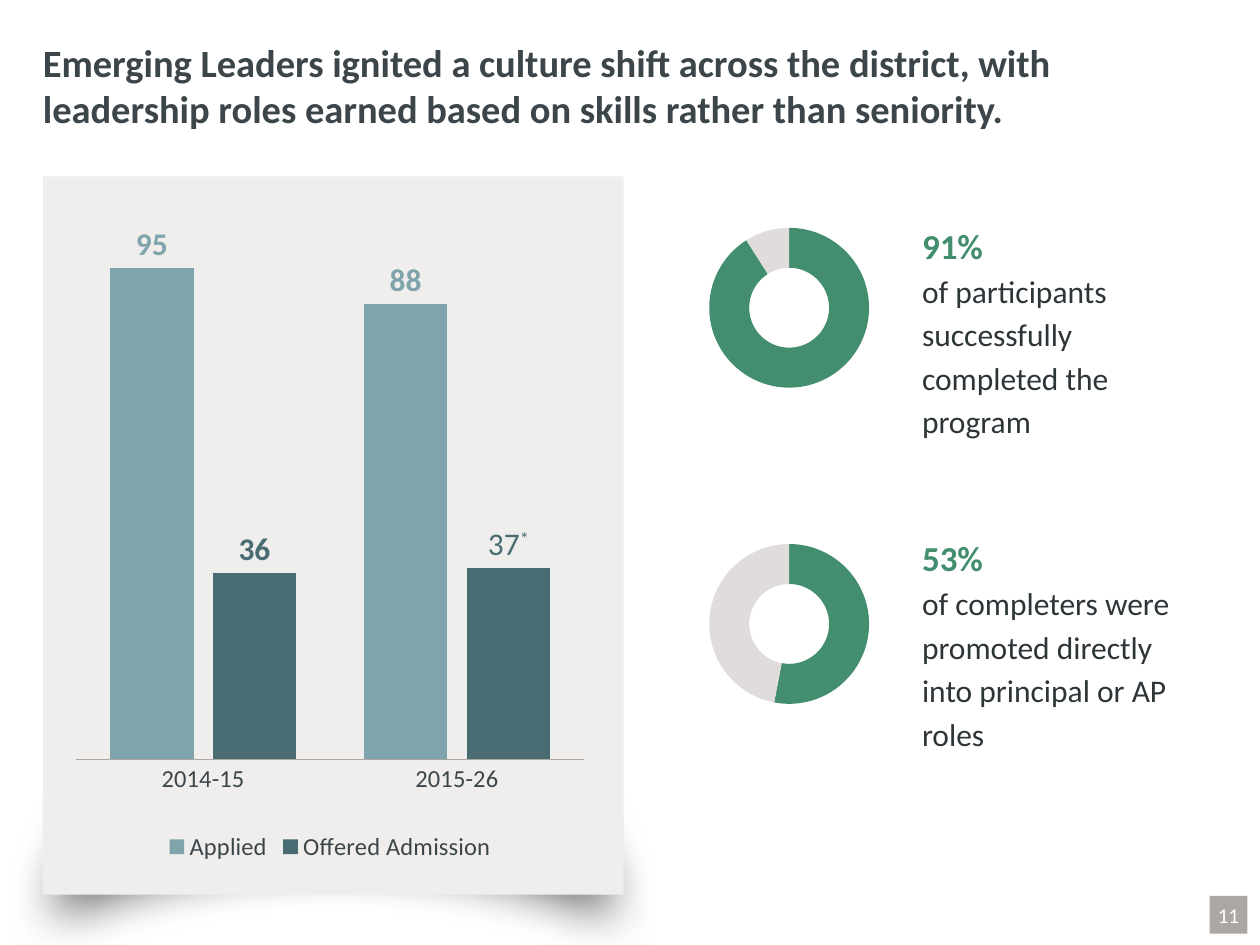
from lxml import etree
from pptx import Presentation
from pptx.chart import data as cd
from pptx.dml.color import RGBColor
from pptx.enum import chart as ec, shapes, text
from pptx.oxml import parse_xml
from pptx.oxml import ns
from pptx.util import Pt

FACE = "Calibri"
HUES = {
    "white": "FFFFFF", "panel": "EFEEED", "gray": "ADA7A4", "ink": "3C464A",
    "body": "2D3538", "green": "428E6E", "ring": "438E6E", "rest": "DFDCDB",
    "light": "80A4AC", "dark": "496C73",
}


def paint(fill, hue):
    fill.solid()
    fill.fore_color.rgb = RGBColor.from_string(HUES[hue])


def style(font, size, hue, bold=False):
    font.name = FACE
    font.size = Pt(size)
    font.bold = bold
    font.color.rgb = RGBColor.from_string(HUES[hue])


def add_run(para, words, size, hue, bold=False):
    run = para.add_run()
    run.text = words
    style(run.font, size, hue, bold)
    return run


def add_box(slide, box, left=7.2):
    frame = slide.shapes.add_textbox(*map(Pt, box)).text_frame
    frame.word_wrap = True
    frame.margin_left = Pt(left)
    return frame


def add_form(slide, kind, box, hue):
    form = slide.shapes.add_shape(kind, *map(Pt, box))
    form.shadow.inherit = False
    paint(form.fill, hue)
    form.line.fill.background()
    return form


def set_plot(chart, x, y, w, h):
    plot = chart._chartSpace.chart.plotArea
    for old in plot.findall(ns.qn("c:layout")):
        plot.remove(old)
    parts = [("layoutTarget", "inner"), ("xMode", "edge"), ("yMode", "edge"),
             ("x", x), ("y", y), ("w", w), ("h", h)]
    inner = "".join(f'<c:{tag} val="{val}"/>' for tag, val in parts)
    plot.insert(0, parse_xml(
        f'<c:layout {ns.nsdecls("c")}><c:manualLayout>{inner}'
        "</c:manualLayout></c:layout>"))


def add_chart(slide, kind, box, cats, rows):
    data = cd.CategoryChartData(number_format="0")
    data.categories = cats
    for name, vals in rows:
        data.add_series(name, vals)
    chart = slide.shapes.add_chart(kind, *map(Pt, box), data).chart
    chart.has_title = False
    chart.has_legend = False
    style(chart.font, 18, "ink")
    return chart


def add_title(slide, box):
    para = add_box(slide, box, 0).paragraphs[0]
    add_run(para, "Emerging Leaders ignited a culture shift across the district, "
            "with leadership roles earned based on skills rather than seniority.",
            22, "ink", True)


def add_panel(slide, box):
    x, y, w, h = box
    wide, tall = 113.8, 319
    moon = add_form(slide, shapes.MSO_SHAPE.MOON,
                    (x + (w - wide) / 2, y + h - (wide + tall) / 2, wide, tall),
                    "white")
    moon.rotation = 90
    moon.adjustments[0] = 0.73
    glow = moon._element.spPr.find(ns.qn("a:effectLst"))
    shade = etree.SubElement(glow, ns.qn("a:outerShdw"), blurRad=str(Pt(28)),
                             dist=str(Pt(13)), dir="5400000", rotWithShape="0")
    black = etree.SubElement(shade, ns.qn("a:srgbClr"), val="000000")
    etree.SubElement(black, ns.qn("a:alpha"), val="61000")
    add_form(slide, shapes.MSO_SHAPE.RECTANGLE, box, "panel")


def add_bars(slide, box):
    chart = add_chart(slide, ec.XL_CHART_TYPE.COLUMN_CLUSTERED, box,
                      ["2014-15", "2015-26"],
                      [("Applied", (95, 88)), ("Offered Admission", (36, 37))])
    set_plot(chart, 0, 0.07, 1, 0.77)
    chart.has_legend = True
    chart.legend.position = ec.XL_LEGEND_POSITION.BOTTOM
    chart.legend.include_in_layout = False
    style(chart.legend.font, 14, "ink")
    scale = chart.value_axis
    scale.minimum_scale, scale.maximum_scale, scale.major_unit = 0, 100, 20
    scale.has_major_gridlines = False
    scale.visible = False
    axis = chart.category_axis
    axis.major_tick_mark = ec.XL_TICK_MARK.NONE
    style(axis.tick_labels.font, 14, "ink")
    paint(axis.format.line.fill, "gray")
    axis.format.line.width = Pt(0.75)
    plot = chart.plots[0]
    plot.vary_by_categories = False
    plot.gap_width, plot.overlap = 81, -23
    for row, hue in zip(plot.series, ("light", "dark")):
        paint(row.format.fill, hue)
        tags = row.data_labels
        tags.show_value = True
        tags.number_format = "0"
        tags.number_format_is_linked = False
        tags.position = ec.XL_LABEL_POSITION.OUTSIDE_END
        style(tags.font, 18, hue, True)
    note = plot.series[1].points[1].data_label
    para = note.text_frame.paragraphs[0]
    add_run(para, "37", 18, "dark")
    star = add_run(para, "*", 18, "dark")
    star._r.get_or_add_rPr().set("baseline", "30000")
    note.position = ec.XL_LABEL_POSITION.OUTSIDE_END


def add_stat(slide, ring, box, share, words):
    chart = add_chart(slide, ec.XL_CHART_TYPE.DOUGHNUT, ring, ["1", "2"],
                      [("Series 1", (share, 100 - share))])
    set_plot(chart, 0.11, 0.07, 0.83, 0.9)
    plot = chart.plots[0]
    plot._element.find(ns.qn("c:holeSize")).set("val", "53")
    for i, hue in enumerate(("ring", "rest")):
        part = plot.series[0].points[i].format
        paint(part.fill, hue)
        part.line.fill.background()
    para = add_box(slide, box).paragraphs[0]
    para.line_spacing = 1.15
    add_run(para, f"{share}%", 20, "green", True)
    para.add_line_break()
    add_run(para, words, 18, "body")


def add_page(slide, box):
    x, y, w, h = box
    add_form(slide, shapes.MSO_SHAPE.RECTANGLE, box, "gray")
    frame = add_box(slide, (x - 7.2, y, w + 14.4, h))
    frame.vertical_anchor = text.MSO_ANCHOR.MIDDLE
    para = frame.paragraphs[0]
    para.alignment = text.PP_ALIGN.CENTER
    add_run(para, "11", 12, "white")


def main():
    deck = Presentation()
    deck.slide_width, deck.slide_height = Pt(720), Pt(540)
    slide = deck.slides.add_slide(deck.slide_layouts[6])
    add_page(slide, (691.2, 512, 21.6, 21.6))
    add_panel(slide, (24.5, 100.8, 332, 410.4))
    add_title(slide, (24.5, 18.7, 670.3, 33.8))
    add_bars(slide, (43.2, 111.6, 290.9, 383.8))
    stats = [
        (91, "of participants successfully completed the program"),
        (53, "of completers were promoted directly into principal or AP roles"),
    ]
    for i, (share, words) in enumerate(stats):
        add_stat(slide, (393.1, 123.1 + 180.7 * i, 110.2, 101.5),
                 (519.8, 121 + 178.6 * i, 174.2, 137), share, words)
    deck.save("out.pptx")


if __name__ == "__main__":
    main()
